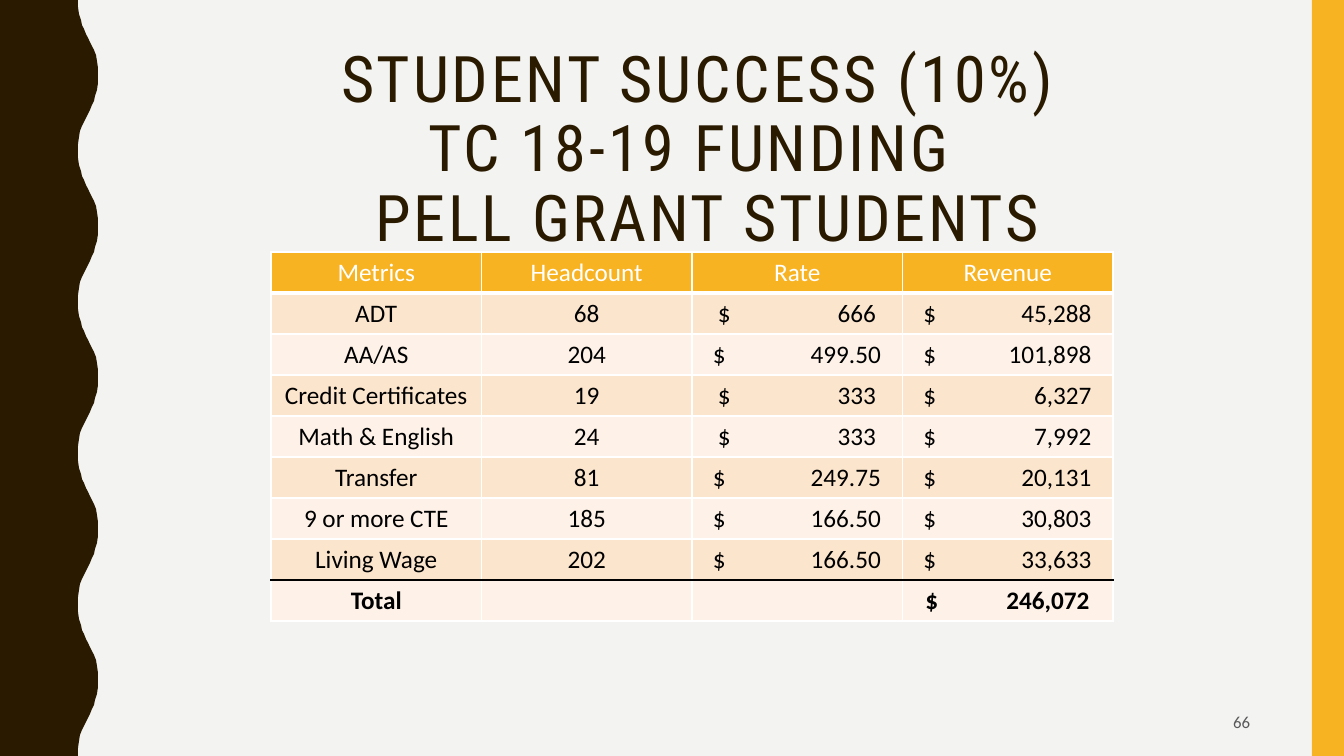
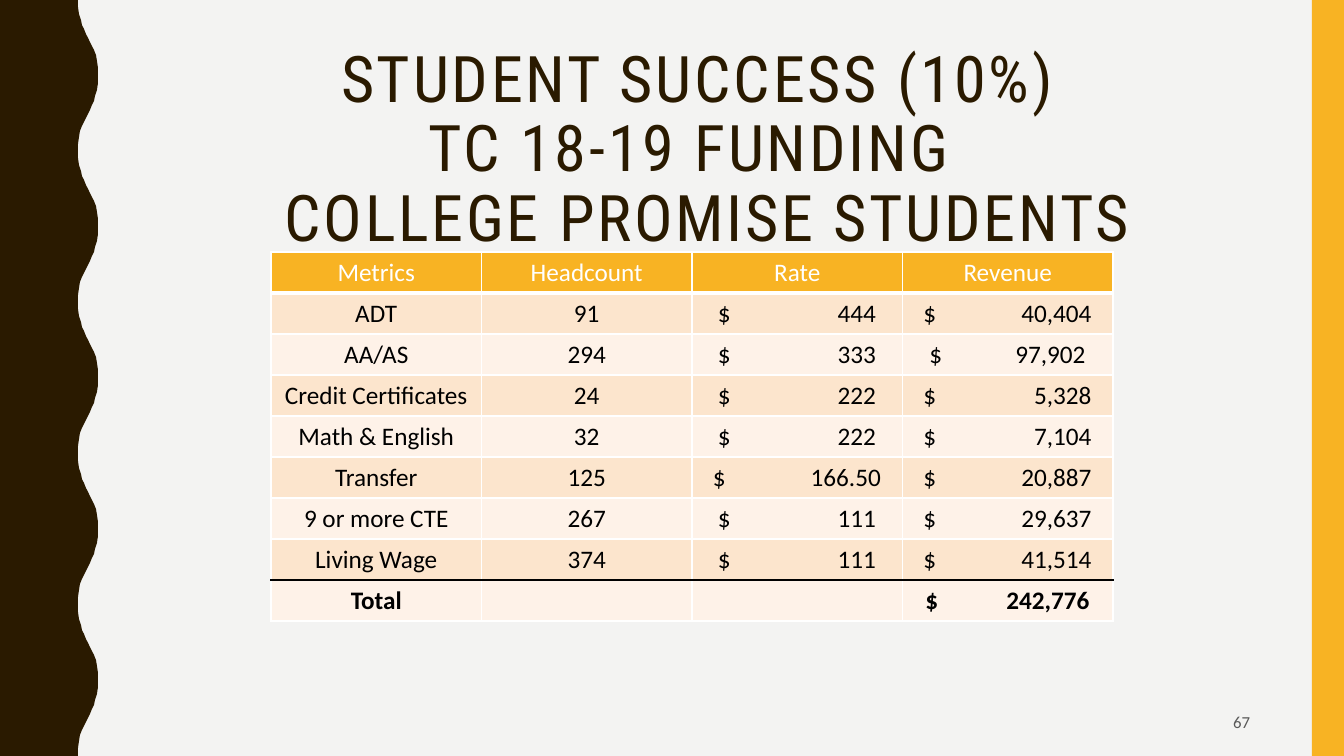
"""Build the two Student Success funding slides."""
from dataclasses import dataclass
from typing import NamedTuple

from lxml.etree import SubElement
from pptx import Presentation
from pptx.dml.color import RGBColor
from pptx.enum.shapes import MSO_SHAPE
from pptx.enum.text import MSO_ANCHOR, PP_ALIGN
from pptx.oxml import parse_xml
from pptx.oxml.ns import nsdecls, qn
from pptx.util import Pt

PAGE_WIDTH, PAGE_HEIGHT = 1344, 756
SCALE = 12192000 / PAGE_WIDTH

COLORS = {
    "background": "F3F3F2",
    "brown": "2A1A00",
    "gold": "F8B323",
    "band_dark": "FCE5CD",
    "band_light": "FEF2E8",
    "white": "FFFFFF",
    "black": "000000",
    "gray": "595959",
}
TITLE_FONT, BODY_FONT = "Roboto Condensed", "Calibri"

HALF_WAVE = [(78, 0), (78, 7), (79, 14), (81, 20), (82, 25), (84, 29), (86, 34),
             (88, 38), (90, 42), (92, 46), (94, 50), (96, 55), (97, 61), (98, 68)]
HALF_WAVE_COUNT = 10

TABLE_LEFT, TABLE_TOP, TABLE_WIDTH = 271, 252, 842
COLUMN_WIDTH, ROW_HEIGHT = 210, 41
HEADINGS = ["Metrics", "Headcount", "Rate", "Revenue"]


@dataclass(frozen=True)
class Amount:
    value: str
    inset: int = 21


class Metric(NamedTuple):
    name: str
    headcount: str
    rate: Amount
    revenue: Amount


class FundingPage(NamedTuple):
    group: str
    number: str
    metrics: list[Metric]
    total: Amount


class Edge(NamedTuple):
    color: str
    points: int


def whole(value: str) -> Amount:
    return Amount(value, 26)


PAGES = [
    FundingPage("PELL GRANT STUDENTS", "66", [
        Metric("ADT", "68", whole("666"), Amount("45,288")),
        Metric("AA/AS", "204", Amount("499.50"), Amount("101,898")),
        Metric("Credit Certificates", "19", whole("333"), Amount("6,327")),
        Metric("Math & English", "24", whole("333"), Amount("7,992")),
        Metric("Transfer", "81", Amount("249.75"), Amount("20,131")),
        Metric("9 or more CTE", "185", Amount("166.50"), Amount("30,803")),
        Metric("Living Wage", "202", Amount("166.50"), Amount("33,633")),
    ], Amount("246,072", 23)),
    FundingPage("COLLEGE PROMISE STUDENTS", "67", [
        Metric("ADT", "91", whole("444"), Amount("40,404")),
        Metric("AA/AS", "294", whole("333"), Amount("97,902", 27)),
        Metric("Credit Certificates", "24", whole("222"), Amount("5,328")),
        Metric("Math & English", "32", whole("222"), Amount("7,104")),
        Metric("Transfer", "125", Amount("166.50"), Amount("20,887")),
        Metric("9 or more CTE", "267", whole("111"), Amount("29,637")),
        Metric("Living Wage", "374", whole("111"), Amount("41,514")),
    ], Amount("242,776", 23)),
]


def px(length: float) -> int:
    return round(length * SCALE)


def rgb(name: str) -> RGBColor:
    return RGBColor.from_string(COLORS[name])


def add_span(paragraph, text: str, font: str, size: float, color: str, bold: bool = False):
    span = paragraph.add_run()
    span.text = text
    span.font.name = font
    span.font.size = Pt(size)
    span.font.bold = bold
    span.font.color.rgb = rgb(color)
    return span


def paint(shape, color: str) -> None:
    shape.shadow.inherit = False
    shape.fill.solid()
    shape.fill.fore_color.rgb = rgb(color)
    shape.line.fill.background()


def wave_points() -> list[tuple[int, int]]:
    half_height = PAGE_HEIGHT / HALF_WAVE_COUNT
    crest = HALF_WAVE[-1][0]
    trough = HALF_WAVE[0][0]
    points = []
    for index in range(HALF_WAVE_COUNT):
        for x, y in HALF_WAVE:
            edge = x if index % 2 == 0 else trough + crest - x
            points.append((edge, round(index * half_height + y)))
    return points + [(trough, PAGE_HEIGHT)]


def add_frame(slide) -> None:
    slide.background.fill.solid()
    slide.background.fill.fore_color.rgb = rgb("background")
    outline = slide.shapes.build_freeform(0, 0, scale=SCALE)
    outline.add_line_segments(wave_points() + [(0, PAGE_HEIGHT)], close=True)
    paint(outline.convert_to_shape(), "brown")
    band = slide.shapes.add_shape(MSO_SHAPE.RECTANGLE, px(1312), 0, px(32), px(PAGE_HEIGHT))
    paint(band, "gold")


def add_box(slide, left: int, top: int, width: int, height: int,
            anchor: MSO_ANCHOR, align: PP_ALIGN):
    box = slide.shapes.add_textbox(px(left), px(top), px(width), px(height))
    box.text_frame.word_wrap = True
    box.text_frame.vertical_anchor = anchor
    paragraph = box.text_frame.paragraphs[0]
    paragraph.alignment = align
    return paragraph


def add_title(slide, group: str) -> None:
    paragraph = add_box(slide, 138, 42, 1122, 164, MSO_ANCHOR.TOP, PP_ALIGN.CENTER)
    paragraph.line_spacing = 0.9
    lines = ["STUDENT SUCCESS (10%)", "TC 18-19 FUNDING ", f" {group}"]
    for index, line in enumerate(lines):
        if index:
            paragraph.add_line_break()
        span = add_span(paragraph, line, TITLE_FONT, 45.9, "brown")
        span.font._element.set("spc", "200")
    for line_break in paragraph._p.findall(qn("a:br")):
        SubElement(line_break, qn("a:rPr")).set("sz", "4590")


def set_borders(cell, top: Edge, bottom: Edge) -> None:
    side = Edge("white", 1)
    properties = cell._tc.get_or_add_tcPr()
    for index, (tag, edge) in enumerate(zip(("lnL", "lnR", "lnT", "lnB"),
                                            (side, side, top, bottom))):
        properties.insert(index, parse_xml(
            f'<a:{tag} {nsdecls("a")} w="{Pt(edge.points)}"><a:solidFill>'
            f'<a:srgbClr val="{COLORS[edge.color]}"/></a:solidFill></a:{tag}>'))


def fill_cell(cell, content: str | Amount, color: str, bold: bool) -> None:
    paragraph = cell.text_frame.paragraphs[0]
    if isinstance(content, Amount):
        cell.margin_left, cell.margin_right = px(content.inset), 0
        paragraph.alignment = PP_ALIGN.LEFT
        tabs = SubElement(paragraph._p.get_or_add_pPr(), qn("a:tabLst"))
        tab = SubElement(tabs, qn("a:tab"))
        tab.set("pos", str(px(COLUMN_WIDTH - 2 * content.inset)))
        tab.set("algn", "r")
        text = f"$\t{content.value}"
    else:
        paragraph.alignment = PP_ALIGN.CENTER
        text = content
    if text:
        add_span(paragraph, text, BODY_FONT, 18, color, bold)


def add_funding_table(slide, page: FundingPage) -> None:
    rows = [HEADINGS, *page.metrics, ["Total", "", "", page.total]]
    last = len(rows) - 1
    table = slide.shapes.add_table(
        len(rows), len(HEADINGS), px(TABLE_LEFT), px(TABLE_TOP),
        px(TABLE_WIDTH), px(ROW_HEIGHT * len(rows))).table
    table.first_row = table.horz_banding = False
    for row_index, row in enumerate(rows):
        table.rows[row_index].height = px(ROW_HEIGHT)
        header, total = row_index == 0, row_index == last
        band = "gold" if header else "band_dark" if row_index % 2 else "band_light"
        top = Edge("black" if total else "white", 1)
        bottom = Edge("black" if row_index == last - 1 else "white", 3 if header else 1)
        for column_index, content in enumerate(row):
            cell = table.cell(row_index, column_index)
            cell.fill.solid()
            cell.fill.fore_color.rgb = rgb(band)
            set_borders(cell, top, bottom)
            fill_cell(cell, content, "white" if header else "black", total)


def add_page_number(slide, number: str) -> None:
    paragraph = add_box(slide, 950, 703, 310, 38, MSO_ANCHOR.MIDDLE, PP_ALIGN.RIGHT)
    add_span(paragraph, number, BODY_FONT, 12, "gray")


def main() -> None:
    deck = Presentation()
    deck.slide_width, deck.slide_height = px(PAGE_WIDTH), px(PAGE_HEIGHT)
    for page in PAGES:
        slide = deck.slides.add_slide(deck.slide_layouts[6])
        add_frame(slide)
        add_title(slide, page.group)
        add_funding_table(slide, page)
        add_page_number(slide, page.number)
    deck.save("out.pptx")


if __name__ == "__main__":
    main()
